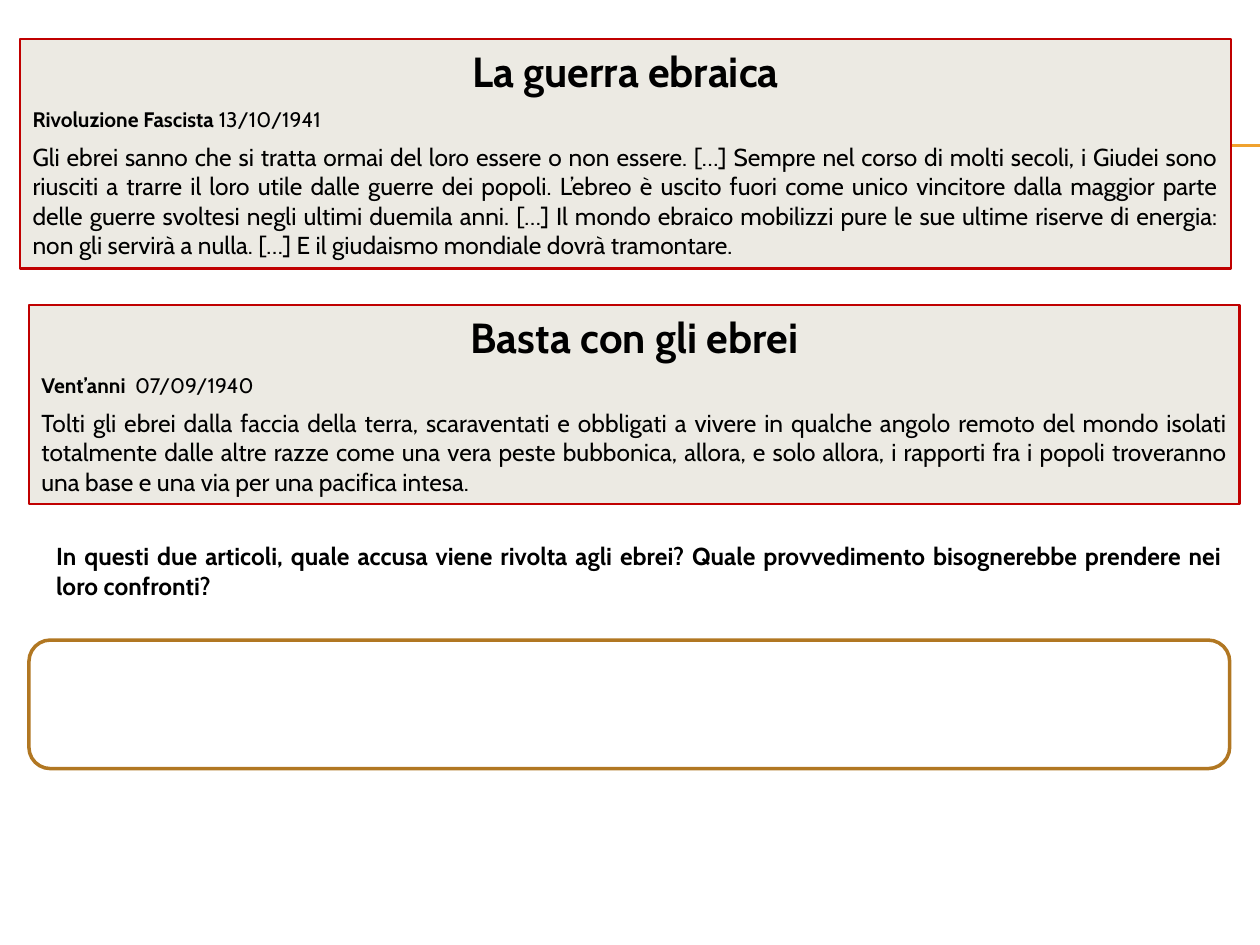
"""Build a slide with two press excerpts, a question and an answer box."""
from pptx import Presentation
from pptx.dml.color import RGBColor
from pptx.enum.shapes import MSO_CONNECTOR as Conn, MSO_SHAPE as Kind
from pptx.enum.text import MSO_ANCHOR as Anchor, MSO_AUTO_SIZE as Fit, PP_ALIGN as Align
from pptx.oxml.ns import qn
from pptx.util import Inches, Pt
from lxml.etree import SubElement

FONT = "Cabin"
GOLD, BROWN, RED = "F0A22E", "B17722", "C00000"
CREAM, WHITE, BLACK = "ECEAE3", "FFFFFF", "000000"

ARTICLES = [
    {
        "box": (0.16, 0.31, 9.61, 1.82),
        "title": "La guerra ebraica",
        "source": ("Rivoluzione Fascista ", "13/10/1941"),
        "quote": "Gli ebrei sanno che si tratta ormai del loro essere o non essere. […] "
                 "Sempre nel corso di molti secoli, i Giudei sono riusciti a trarre il loro utile "
                 "dalle guerre dei popoli. L’ebreo è uscito fuori come unico vincitore dalla "
                 "maggior parte delle guerre svoltesi negli ultimi duemila anni. […] Il mondo "
                 "ebraico mobilizzi pure le sue ultime riserve di energia: non gli servirà a "
                 "nulla. […] E il giudaismo mondiale dovrà tramontare.",
    },
    {
        "box": (0.23, 2.42, 9.61, 1.58),
        "title": "Basta con gli ebrei",
        "source": ("Vent’anni  ", "07/09/1940"),
        "quote": "Tolti gli ebrei dalla faccia della terra, scaraventati e obbligati a vivere in "
                 "qualche angolo remoto del mondo isolati totalmente dalle altre razze come una "
                 "vera peste bubbonica, allora, e solo allora, i rapporti fra i popoli troveranno "
                 "una base e una via per una pacifica intesa.",
    },
]
QUESTION = ("In questi due articoli, quale accusa viene rivolta agli ebrei? "
            "Quale provvedimento bisognerebbe prendere nei loro confronti?")
QUESTION_BOX = (0.31, 4.14, 9.53, 0.78)
ANSWER_BOX = (0.23, 5.08, 9.53, 1.02)
RULES = (1.15, 1.16)


def tint(color, code):
    color.rgb = RGBColor.from_string(code)


def add_box(slide, kind, box, fill=None, line=None, width=1.5):
    shape = slide.shapes.add_shape(kind, *map(Inches, box))
    shape.shadow.inherit = False
    if fill:
        shape.fill.solid()
        tint(shape.fill.fore_color, fill)
    else:
        shape.fill.background()
    if line:
        tint(shape.line.color, line)
        shape.line.width = Pt(width)
    else:
        shape.line.fill.background()
    return shape


def add_rule(slide, y):
    rule = slide.shapes.add_connector(Conn.STRAIGHT, Inches(0.56), Inches(y), Inches(10), Inches(y))
    tint(rule.line.color, GOLD)
    rule.line.width = Pt(0.75)
    SubElement(rule._element.spPr, qn("a:effectLst"))


def write(para, parts, size, align, after=0):
    para.alignment = align
    para.space_after = Pt(after)
    for text, bold in parts:
        run = para.add_run()
        run.text = text
        run.font.name, run.font.size, run.font.bold = FONT, Pt(size), bold
        tint(run.font.color, BLACK)


def add_article(slide, item):
    frame = add_box(slide, Kind.RECTANGLE, item["box"], CREAM, RED).text_frame
    frame.word_wrap, frame.auto_size = True, Fit.SHAPE_TO_FIT_TEXT
    frame.vertical_anchor = Anchor.TOP
    paper, date = item["source"]
    write(frame.paragraphs[0], [(item["title"], True)], 24, Align.CENTER, 6)
    write(frame.add_paragraph(), [(paper, True), (date, False)], 12, Align.LEFT, 6)
    write(frame.add_paragraph(), [(item["quote"], False)], 14, Align.JUSTIFY)


def main():
    deck = Presentation()
    deck.slide_width, deck.slide_height = Inches(10), Inches(7.5)
    slide = deck.slides.add_slide(deck.slide_layouts[6])
    for y in RULES:
        add_rule(slide, y)
    for item in ARTICLES:
        add_article(slide, item)
    frame = add_box(slide, Kind.ROUNDED_RECTANGLE, QUESTION_BOX).text_frame
    frame.word_wrap, frame.vertical_anchor = True, Anchor.MIDDLE
    write(frame.paragraphs[0], [(QUESTION, True)], 14, Align.JUSTIFY)
    add_box(slide, Kind.ROUNDED_RECTANGLE, ANSWER_BOX, WHITE, BROWN, 2)
    deck.save("out.pptx")


if __name__ == "__main__":
    main()
